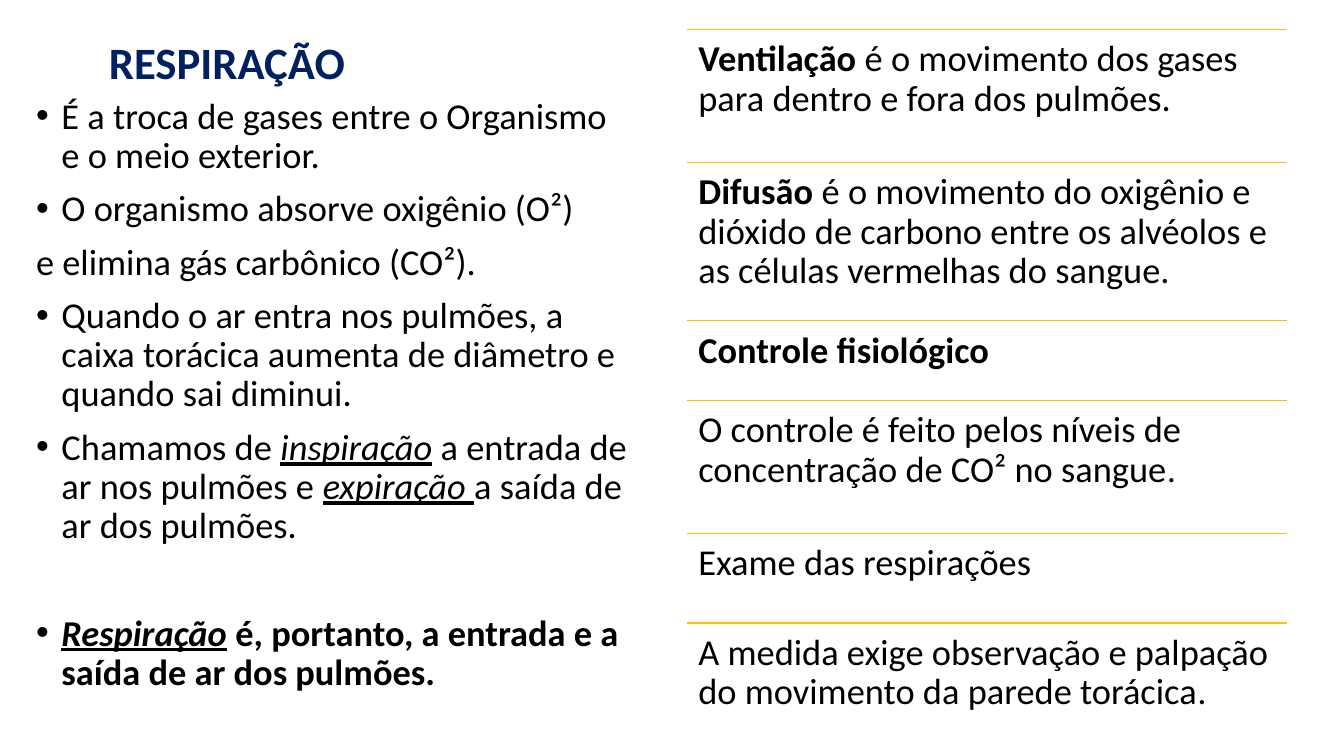
from lxml import etree
from pptx import Presentation
from pptx import util as u
from pptx.dml.color import RGBColor
from pptx.enum import shapes, text
from pptx.oxml import ns

NAVY = RGBColor(0x00, 0x20, 0x60)
BLACK = RGBColor(0x00, 0x00, 0x00)
GOLD = RGBColor(0xFF, 0xC0, 0x00)

PLAIN, BOLD, SMALL = {}, {"bold": True}, {"size": u.Pt(25)}
TERM = {"italic": True, "underline": True}
UNDER = {"underline": True}

TITLE = "RESPIRAÇÃO"

# each entry: bulleted, space before in points, runs
POINTS = [
    (True, 0, [("É a troca de gases entre o Organismo e o meio exterior.", PLAIN)]),
    (True, 10, [("O organismo absorve oxigênio (O²)", PLAIN)]),
    (False, 10, [("e elimina gás carbônico (CO²).", PLAIN)]),
    (True, 10, [("Quando o ar entra nos pulmões, a caixa torácica aumenta "
                 "de diâmetro e quando sai diminui.", PLAIN)]),
    (True, 10, [("Chamamos de ", PLAIN), ("inspiração", TERM),
                (" a entrada de ar nos pulmões e ", PLAIN), ("expiração", TERM),
                (" ", UNDER), ("a saída de ar dos pulmões.", PLAIN)]),
    (True, 48.5, [("Respiração", BOLD | TERM),
                  (" é, portanto, a entrada e a saída de ar dos pulmões.", BOLD)]),
]

ROWS = [
    (3.35, [("Ventilação", BOLD),
            (" é o movimento dos gases para dentro e fora dos pulmões.", PLAIN)]),
    (3.99, [("Difusão", BOLD),
            (" é o movimento do oxigênio e dióxido de carbono entre os alvéolos "
             "e as células vermelhas do sangue.", PLAIN)]),
    (2.01, [("Controle fisiológico", BOLD)]),
    (3.35, [("O controle é feito pelos níveis de concentração de CO² no sangue", PLAIN),
            (".", SMALL)]),
    (2.26, [("Exame das respirações", PLAIN)]),
    (3.35, [("A medida exige observação e palpação do movimento da parede torácica", PLAIN),
            (".", SMALL)]),
]
ROW_LEFT, ROW_TOP, ROW_WIDTH = 17.32, 0.74, 15.11


def write(p, runs, size=26, color=BLACK, spacing=0.9, before=0, bullet=False):
    """Fill a paragraph with formatted runs."""
    if bullet:
        pPr = p._p.get_or_add_pPr()
        pPr.set("marL", str(u.Cm(0.64)))
        pPr.set("indent", str(-u.Cm(0.64)))
        etree.SubElement(pPr, ns.qn("a:buFont")).set("typeface", "Arial")
        etree.SubElement(pPr, ns.qn("a:buChar")).set("char", "•")
    p.alignment = text.PP_ALIGN.LEFT
    p.line_spacing = spacing
    p.space_before = u.Pt(before)
    for words, style in runs:
        r = p.add_run()
        r.text = words
        r.font.name = "Calibri"
        r.font.size = u.Pt(size)
        r.font.color.rgb = color
        for name, value in style.items():
            setattr(r.font, name, value)


def add_box(s, left, top, width, height):
    """Add a wrapping text box and return its text frame."""
    tf = s.shapes.add_textbox(u.Cm(left), u.Cm(top), u.Cm(width), u.Cm(height)).text_frame
    tf.word_wrap = True
    return tf


def add_title(s):
    """Place and format the title."""
    sp = s.shapes.title
    sp.left, sp.top, sp.width, sp.height = u.Cm(2.49), u.Cm(0.74), u.Cm(6.53), u.Cm(1.63)
    tf = sp.text_frame
    tf.word_wrap = False
    tf.auto_size = text.MSO_AUTO_SIZE.SHAPE_TO_FIT_TEXT
    tf.vertical_anchor = text.MSO_ANCHOR.TOP
    write(tf.paragraphs[0], [(TITLE, BOLD)], size=32, color=NAVY, spacing=1.0)


def add_points(s):
    """Write the bulleted column."""
    tf = add_box(s, 0.66, 2.34, 15.52, 16.71)
    for i, (bullet, before, runs) in enumerate(POINTS):
        p = tf.add_paragraph() if i else tf.paragraphs[0]
        write(p, runs, before=before, bullet=bullet)


def add_rows(s):
    """Stack the ruled rows of the right column."""
    top = ROW_TOP
    for height, runs in ROWS:
        sp = s.shapes.add_connector(shapes.MSO_CONNECTOR.STRAIGHT, u.Cm(ROW_LEFT), u.Cm(top),
                                    u.Cm(ROW_LEFT + ROW_WIDTH), u.Cm(top))
        sp.line.color.rgb = GOLD
        sp.line.width = u.Pt(1)
        etree.SubElement(sp._element.spPr, ns.qn("a:effectLst"))
        tf = add_box(s, ROW_LEFT, top, ROW_WIDTH, height)
        tf.margin_left = tf.margin_right = tf.margin_top = tf.margin_bottom = u.Cm(0.28)
        write(tf.paragraphs[0], runs)
        top += height


def main():
    """Build and save the slide."""
    prs = Presentation()
    prs.slide_width, prs.slide_height = u.Cm(33.87), u.Cm(19.05)
    s = prs.slides.add_slide(prs.slide_layouts[5])
    add_title(s)
    add_points(s)
    add_rows(s)
    prs.save("out.pptx")


if __name__ == "__main__":
    main()
